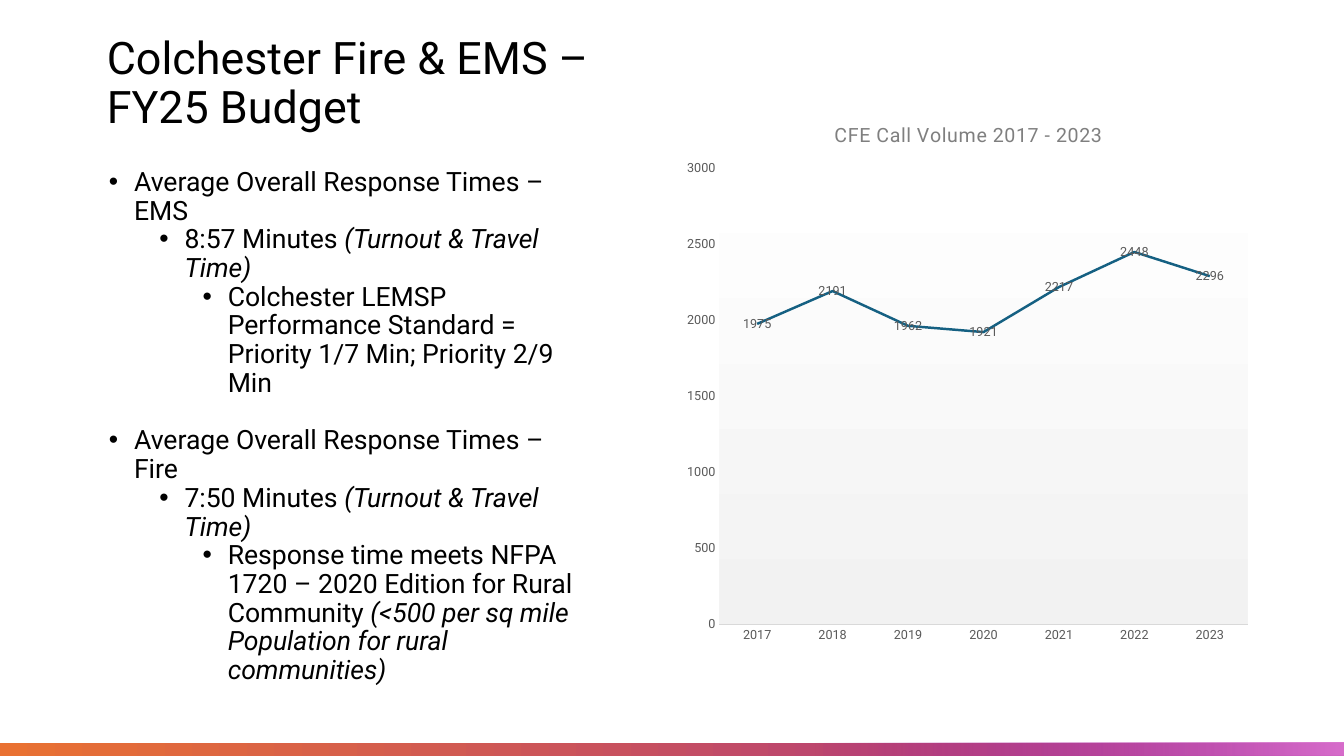
from dataclasses import dataclass

from lxml.etree import SubElement
from pptx import Presentation
from pptx.chart.data import CategoryChartData
from pptx.dml.color import RGBColor
from pptx.enum.chart import XL_CHART_TYPE, XL_LABEL_POSITION, XL_TICK_MARK
from pptx.enum.shapes import MSO_SHAPE
from pptx.enum.text import MSO_ANCHOR, MSO_AUTO_SIZE, PP_ALIGN
from pptx.oxml import parse_xml
from pptx.oxml.ns import nsdecls, qn
from pptx.util import Inches, Pt


@dataclass(frozen=True)
class Theme:
    font: str = "Roboto"
    title_size: int = 32
    body_size: int = 19
    chart_title_size: int = 14
    chart_size: int = 10
    label_size: int = 9
    black: str = "000000"
    white: str = "FFFFFF"
    light: str = "F2F2F2"
    rule: str = "D9D9D9"
    grey: str = "595959"
    title_grey: str = "7F7F7F"
    blue: str = "156082"
    orange: str = "E97132"
    purple: str = "A02B93"
    pink: str = "D86ECC"


THEME = Theme()


def style_font(font, size, color, italic=False):
    values = {"name": THEME.font, "size": Pt(size), "bold": False, "italic": italic}
    for name, value in values.items():
        setattr(font, name, value)
    font.color.rgb = RGBColor.from_string(color)


def set_chart_layout(parent, index, **fractions):
    """Fix the place of a chart part, in fractions of the chart's size."""
    for layout in parent.findall(qn("c:layout")):
        parent.remove(layout)
    layout = parse_xml(f"<c:layout {nsdecls('c')}/>")
    manual = SubElement(layout, qn("c:manualLayout"))
    for name, value in fractions.items():
        SubElement(manual, qn(f"c:{name}")).set("val", str(value))
    parent.insert(index, layout)


deck = Presentation()
deck.slide_width, deck.slide_height = Inches(13.33), Inches(7.5)
slide = deck.slides.add_slide(deck.slide_layouts[1])

# Title and body placeholders
title, body = slide.shapes.title, slide.placeholders[1]
frames = [
    (title, (0.96, 0.3, 5.03, 1.07), MSO_ANCHOR.BOTTOM),
    (body, (0.85, 1.62, 5.03, 4.85), MSO_ANCHOR.TOP),
]
for box, place, anchor in frames:
    box.left, box.top, box.width, box.height = map(Inches, place)
    box.text_frame.word_wrap = True
    box.text_frame.auto_size = MSO_AUTO_SIZE.NONE
    box.text_frame.vertical_anchor = anchor

para = title.text_frame.paragraphs[0]
para.alignment = PP_ALIGN.LEFT
para.line_spacing = 0.9
span = para.add_run()
span.text = "Colchester Fire & EMS – FY25 Budget"
style_font(span.font, THEME.title_size, THEME.black)

# Bullets: level, plain text, italic text, space before
bullets = [
    (0, "Average Overall Response Times – EMS", "", 0),
    (1, "8:57 Minutes ", "(Turnout & Travel Time)", 0),
    (2, "Colchester LEMSP Performance Standard = Priority 1/7 Min; Priority 2/9 Min", "", 0),
    (0, "Average Overall Response Times – Fire", "", 20.5),
    (1, "7:50 Minutes ", "(Turnout & Travel Time)", 0),
    (2, "Response time meets NFPA 1720 – 2020 Edition for Rural Community ",
     "(<500 per sq mile Population for rural communities)", 0),
]
indents = [0.38, 0.88, 1.31]
for number, (level, plain, italic, gap) in enumerate(bullets):
    para = body.text_frame.add_paragraph() if number else body.text_frame.paragraphs[0]
    settings = {"level": level, "line_spacing": 0.9, "space_before": Pt(gap),
                "space_after": Pt(0), "alignment": PP_ALIGN.LEFT}
    for name, value in settings.items():
        setattr(para, name, value)
    properties = para._p.get_or_add_pPr()
    properties.set("marL", str(Inches(indents[level])))
    properties.set("indent", str(Inches(-0.25)))
    SubElement(properties, qn("a:buFont")).set("typeface", "Arial")
    SubElement(properties, qn("a:buChar")).set("char", "•")
    for text, is_italic in ((plain, False), (italic, True)):
        if text:
            span = para.add_run()
            span.text = text
            style_font(span.font, THEME.body_size, THEME.black, is_italic)

# Bottom band: left edge, width, gradient stops as (position, colour, opacity)
bands = [
    (0, 13.33, [(0, THEME.orange, 1), (1, THEME.purple, 1)]),
    (6.85, 6.48, [(0.19, THEME.purple, 0), (1, THEME.pink, 1)]),
]
for left, width, stops in bands:
    band = slide.shapes.add_shape(
        MSO_SHAPE.RECTANGLE, Inches(left), Inches(7.37), Inches(width), Inches(0.13))
    band.shadow.inherit = False
    band.line.fill.background()
    band.fill.gradient()
    band.fill.gradient_angle = 0
    for stop, (position, color, opacity) in zip(band.fill.gradient_stops, stops):
        stop.position = position
        stop.color.rgb = RGBColor.from_string(color)
    for node, (position, color, opacity) in zip(band._element.spPr.iter(qn("a:srgbClr")), stops):
        if opacity < 1:
            SubElement(node, qn("a:alpha")).set("val", str(opacity * 100000))

# Call volume chart
data = CategoryChartData()
data.categories = [str(year) for year in range(2017, 2024)]
data.add_series("Series 1", [1975, 2191, 1962, 1921, 2217, 2448, 2289])
chart = slide.shapes.add_chart(
    XL_CHART_TYPE.LINE, Inches(6.67), Inches(0.95), Inches(5.82), Inches(5.52), data).chart
style_font(chart.font, THEME.chart_size, THEME.black)
chart.has_legend = False
chart.has_title = True
para = chart.chart_title.text_frame.paragraphs[0]
span = para.add_run()
span.text = "CFE Call Volume 2017 - 2023"
style_font(span.font, THEME.chart_title_size, THEME.title_grey)
span.font._element.set("spc", "30")

for axis in (chart.category_axis, chart.value_axis):
    axis.has_major_gridlines = False
    axis.major_tick_mark = axis.minor_tick_mark = XL_TICK_MARK.NONE
    style_font(axis.tick_labels.font, THEME.label_size, THEME.grey)
chart.category_axis.format.line.color.rgb = RGBColor.from_string(THEME.rule)
chart.category_axis.format.line.width = Pt(0.75)
chart.value_axis.format.line.fill.background()
scale = {"minimum_scale": 0, "maximum_scale": 3000, "major_unit": 500}
for name, value in scale.items():
    setattr(chart.value_axis, name, value)

plot = chart.plots[0]
plot.vary_by_categories = False
calls = plot.series[0]
calls.smooth = False
calls.format.line.color.rgb = RGBColor.from_string(THEME.blue)
calls.format.line.width = Pt(1.75)
labels = calls.data_labels
labels.show_value = True
labels.position = XL_LABEL_POSITION.CENTER
style_font(labels.font, THEME.label_size, THEME.grey)
last_label = calls.points[6].data_label
span = last_label.text_frame.paragraphs[0].add_run()
span.text = "2296"
style_font(span.font, THEME.label_size, THEME.grey)
last_label.position = XL_LABEL_POSITION.CENTER

# Chart layout and backgrounds
chart_space = chart.element
plot_area = chart_space.find(".//" + qn("c:plotArea"))
set_chart_layout(plot_area, 0, layoutTarget="inner", xMode="edge", yMode="edge",
                 x=0.08, y=0.13, w=0.9, h=0.82)
set_chart_layout(chart.chart_title._element, 1, xMode="edge", yMode="edge", x=0.27, y=0.04)
plot_area.append(parse_xml(
    f'<c:spPr {nsdecls("c", "a")}><a:gradFill><a:gsLst>'
    f'<a:gs pos="0"><a:srgbClr val="{THEME.white}"/></a:gs>'
    f'<a:gs pos="100000"><a:srgbClr val="{THEME.light}"/></a:gs>'
    '</a:gsLst><a:lin ang="5400000" scaled="0"/></a:gradFill></c:spPr>'))
chart_space.find(qn("c:txPr")).addprevious(parse_xml(
    f'<c:spPr {nsdecls("c", "a")}><a:solidFill><a:srgbClr val="{THEME.white}"/></a:solidFill>'
    '<a:ln><a:noFill/></a:ln></c:spPr>'))

deck.save("out.pptx")
